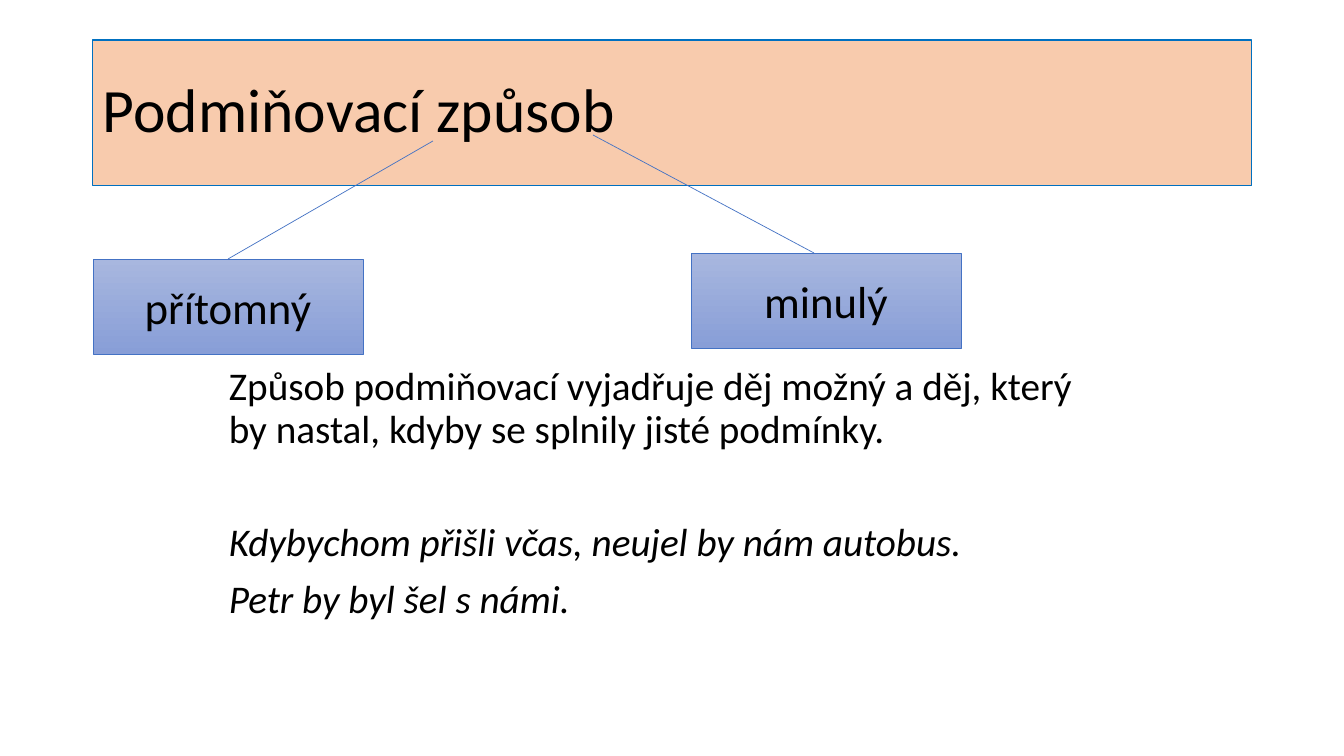
from pptx import Presentation
from pptx.dml.color import RGBColor
from pptx.enum.shapes import MSO_CONNECTOR, MSO_SHAPE
from pptx.enum.text import MSO_ANCHOR, PP_ALIGN
from pptx.oxml.ns import qn
from pptx.util import Pt
from lxml import etree

RECTANGLE, STRAIGHT = MSO_SHAPE.RECTANGLE, MSO_CONNECTOR.STRAIGHT
TOP, MIDDLE = MSO_ANCHOR.TOP, MSO_ANCHOR.MIDDLE
LEFT, CENTER = PP_ALIGN.LEFT, PP_ALIGN.CENTER

THEME = {
    "font": "Calibri",
    "text": RGBColor.from_string("000000"),
    "title_fill": RGBColor.from_string("F8CBAD"),
    "title_line": RGBColor.from_string("0070C0"),
    "tense_fill": [RGBColor.from_string(c) for c in ("A8B7DF", "889ED7")],
    "tense_line": RGBColor.from_string("4472C4"),
    "title_size": Pt(44),
    "tense_size": Pt(32),
    "body_size": Pt(28),
}


def px(*lengths):
    return [round(length * 914400 / 100.8) for length in lengths]


def write(box, lines, size, anchor, align, spacing):
    """Fill a box with (text, space before in points, italic) lines."""
    frame = box.text_frame
    frame.word_wrap = True
    frame.vertical_anchor = anchor
    for index, (text, before, italic) in enumerate(lines):
        para = frame.add_paragraph() if index else frame.paragraphs[0]
        span = para.add_run()
        span.text = text
        para_format = {"alignment": align, "line_spacing": spacing, "space_before": Pt(before)}
        for name, value in para_format.items():
            setattr(para, name, value)
        span_format = {"name": THEME["font"], "size": size, "italic": italic}
        for name, value in span_format.items():
            setattr(span.font, name, value)
        span.font.color.rgb = THEME["text"]


deck = Presentation()
deck.slide_width, deck.slide_height = px(1344, 756)
page = deck.slides.add_slide(deck.slide_layouts[6])

# Title banner
banner = page.shapes.add_shape(RECTANGLE, *px(93, 40, 1159, 146))
banner.shadow.inherit = False
banner.fill.solid()
banner.fill.fore_color.rgb = THEME["title_fill"]
banner.line.color.rgb = THEME["title_line"]
banner.line.width = Pt(0.75)
write(banner, [("Podmiňovací způsob", 0, False)], THEME["title_size"], MIDDLE, LEFT, 0.9)

# Definition and examples
body = page.shapes.add_textbox(*px(219, 362, 907, 313))
body_lines = [
    ("Způsob podmiňovací vyjadřuje děj možný a děj, který by nastal, "
     "kdyby se splnily jisté podmínky.", 0, False),
    ("Kdybychom přišli včas, neujel by nám autobus.", 51, True),
    ("Petr by byl šel s námi.", 10, True),
]
write(body, body_lines, THEME["body_size"], TOP, LEFT, 0.9)

# Tense boxes, each joined to the title by a line
tenses = [
    ("přítomný", 93, 259, (228, 259, 433, 141)),
    ("minulý", 691, 253, (814, 253, 593, 135)),
]
for label, left, top, ends in tenses:
    tense = page.shapes.add_shape(RECTANGLE, *px(left, top, 270, 95))
    tense.shadow.inherit = False
    tense.fill.gradient()
    tense.fill.gradient_angle = 270
    for stop, color in zip(tense.fill.gradient_stops, THEME["tense_fill"]):
        stop.color.rgb = color
    write(tense, [(label, 0, False)], THEME["tense_size"], MIDDLE, CENTER, 1.0)

    branch = page.shapes.add_connector(STRAIGHT, *px(*ends))
    etree.SubElement(branch._element.spPr, qn("a:effectLst"))
    for outlined in (tense, branch):
        outlined.line.color.rgb = THEME["tense_line"]
        outlined.line.width = Pt(0.5)

deck.save("out.pptx")
